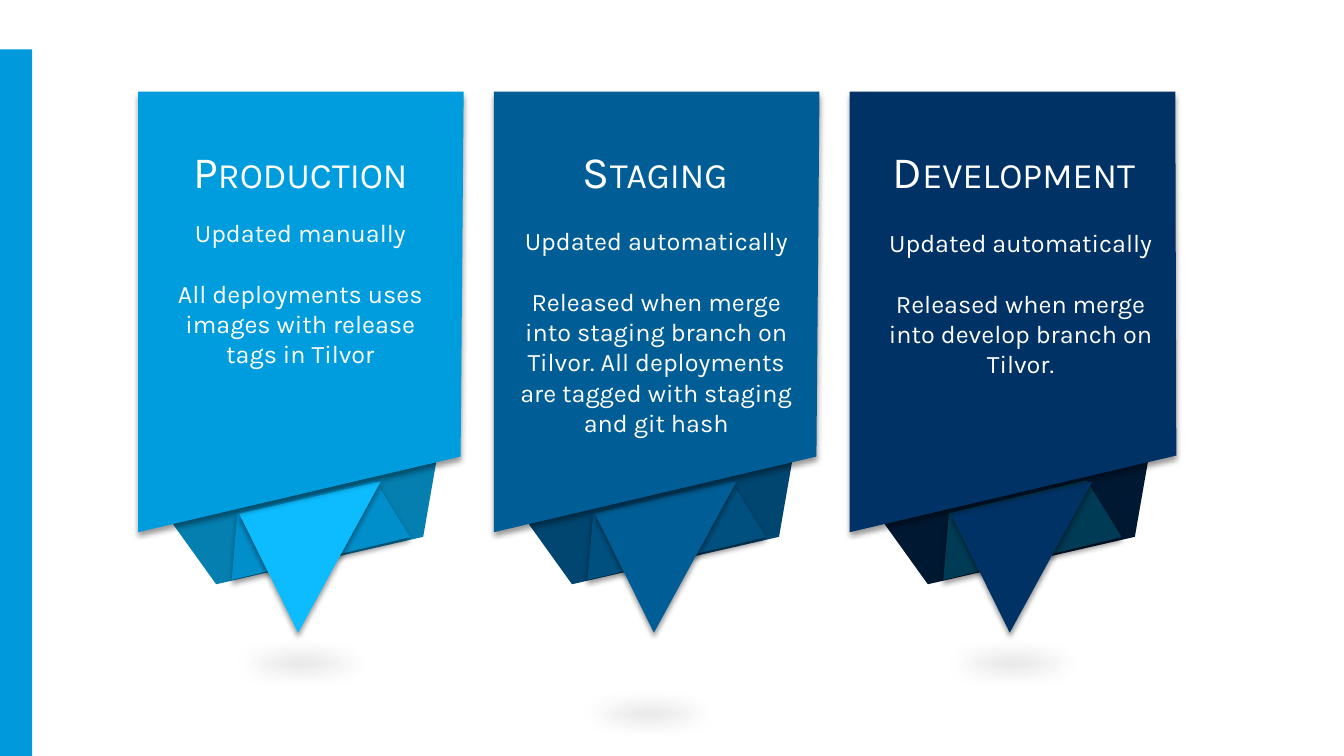
"""Build the slide of three deployment environment banners."""
from dataclasses import dataclass

from lxml import etree
from pptx import Presentation, util as u
from pptx.dml.color import RGBColor
from pptx.enum import shapes, text
from pptx.oxml import ns


@dataclass(frozen=True)
class Theme:
    font: str = "Karla"
    title_size: float = 32
    body_size: float = 18
    body_gap: float = 21.6
    text_color: str = "FFFFFF"
    sidebar: str = "0099DC"
    shade: str = "000000"
    shade_alpha: int = 35
    shadow_alpha: int = 40
    soft_edge: float = 16


@dataclass(frozen=True)
class Banner:
    title: str
    paragraphs: tuple
    colors: tuple
    title_box: tuple
    body_box: tuple
    corner: tuple = (38.4, 54.36)
    ground: tuple = (0, 75.96)


class SlideBuilder:
    columns, rows = 160, 90

    def __init__(self, presentation, theme):
        self.theme = theme
        self.slide = presentation.slides.add_slide(presentation.slide_layouts[6])
        self.column = presentation.slide_width / self.columns
        self.row = presentation.slide_height / self.rows

    def place(self, left, top, width, height):
        return (round(left * self.column), round(top * self.row),
                round(width * self.column), round(height * self.row))

    def color_element(self, parent, alpha):
        color = etree.SubElement(parent, ns.qn("a:srgbClr"), val=self.theme.shade)
        etree.SubElement(color, ns.qn("a:alpha"), val=str(alpha * 1000))

    def paint(self, shape, color, shadow=False):
        shape.shadow.inherit = False
        shape.fill.solid()
        shape.fill.fore_color.rgb = RGBColor.from_string(color)
        shape.line.fill.background()
        if shadow:
            effects = shape._element.spPr.find(ns.qn("a:effectLst"))
            outer = etree.SubElement(
                effects, ns.qn("a:outerShdw"), blurRad=str(u.Pt(4)),
                dist=str(u.Pt(3)), dir="5400000", algn="t", rotWithShape="0")
            self.color_element(outer, self.theme.shadow_alpha)

    def preset(self, kind, box, color, rotation=0, adjustment=None, shadow=False):
        shape = self.slide.shapes.add_shape(kind, *self.place(*box))
        shape.rotation = rotation
        if adjustment is not None:
            shape.adjustments[0] = adjustment
        self.paint(shape, color, shadow)
        return shape

    def outline(self, points, color):
        corners = [(round(x * self.column), round(y * self.row)) for x, y in points]
        builder = self.slide.shapes.build_freeform(*corners[0])
        builder.add_line_segments(corners[1:], close=True)
        self.paint(builder.convert_to_shape(), color, shadow=True)

    def ground_shade(self, box):
        shape = self.preset(shapes.MSO_SHAPE.OVAL, box, self.theme.shade)
        properties = shape._element.spPr
        color = properties.find(ns.qn("a:solidFill"))[0]
        etree.SubElement(color, ns.qn("a:alpha"),
                         val=str(self.theme.shade_alpha * 1000))
        etree.SubElement(properties.find(ns.qn("a:effectLst")), ns.qn("a:softEdge"),
                         rad=str(u.Pt(self.theme.soft_edge)))

    def text_box(self, box, paragraphs, size, small_caps=False):
        frame = self.slide.shapes.add_textbox(*self.place(*box)).text_frame
        frame.word_wrap = True
        frame.auto_size = text.MSO_AUTO_SIZE.SHAPE_TO_FIT_TEXT
        for index, words in enumerate(paragraphs):
            paragraph = frame.add_paragraph() if index else frame.paragraphs[0]
            paragraph.alignment = text.PP_ALIGN.CENTER
            if index:
                paragraph.space_before = u.Pt(self.theme.body_gap)
            run = paragraph.add_run()
            run.text = words
            run.font.name = self.theme.font
            run.font.size = u.Pt(size)
            run.font.color.rgb = RGBColor.from_string(self.theme.text_color)
            if small_caps:
                run._r.get_or_add_rPr().set("cap", "small")

    def banner(self, left, banner):
        kind = shapes.MSO_SHAPE
        back, fold, tip, panel = banner.colors
        self.preset(kind.TRAPEZOID, (left + 4.32, 58.08, 32.64, 8.76), back,
                    167.1, 0.42)
        self.preset(kind.TRAPEZOID, (left + 9.96, 59.04, 21.84, 7.56), fold,
                    346.5, 0.33, shadow=True)
        self.preset(kind.ISOSCELES_TRIANGLE, (left + 13.56, 59.04, 17.28, 15.36),
                    tip, 167, 0.79, shadow=True)
        shift, top = banner.ground
        self.ground_shade((left + shift, top, 38.76, 6))
        corner_x, corner_y = banner.corner
        self.outline([(left, 10.92), (left + 38.76, 10.92),
                      (left + corner_x, corner_y), (left, 63.36)], panel)
        for box, paragraphs, size, small_caps in (
                (banner.title_box, (banner.title,), self.theme.title_size, True),
                (banner.body_box, banner.paragraphs, self.theme.body_size, False)):
            self.text_box((left + box[0], *box[1:]), paragraphs, size, small_caps)


BANNERS = (
    Banner("Production",
           ("Updated manually",
            "All deployments uses images with release tags in Tilvor"),
           ("047FB0", "018FCB", "0DBCFF", "009DDE"),
           (3.48, 16.56, 31.68, 7.68), (3.48, 25.32, 31.68, 19.44)),
    Banner("Staging",
           ("Updated automatically",
            "Released when merge into staging branch on Tilvor. "
            "All deployments are tagged with staging and git hash"),
           ("004670", "00507F", "005D95", "005D95"),
           (3.36, 16.56, 31.68, 7.68), (1.44, 26.28, 35.76, 26.64),
           ground=(-0.96, 81.96)),
    Banner("Development",
           ("Updated automatically",
            "Released when merge into develop branch on Tilvor."),
           ("001831", "003B55", "003265", "003265"),
           (1.56, 16.56, 36, 7.68), (3.48, 26.52, 33.72, 19.44),
           corner=(38.88, 54.24)),
)


def main():
    presentation = Presentation()
    presentation.slide_width = u.Inches(13.33)
    presentation.slide_height = u.Inches(7.5)
    theme = Theme()
    builder = SlideBuilder(presentation, theme)
    builder.preset(shapes.MSO_SHAPE.RECTANGLE, (0, 5.88, 3.84, 84.12), theme.sidebar)
    first_left, pitch = 16.44, 42.36
    for index, banner in enumerate(BANNERS):
        builder.banner(first_left + index * pitch, banner)
    presentation.save("out.pptx")


if __name__ == "__main__":
    main()
